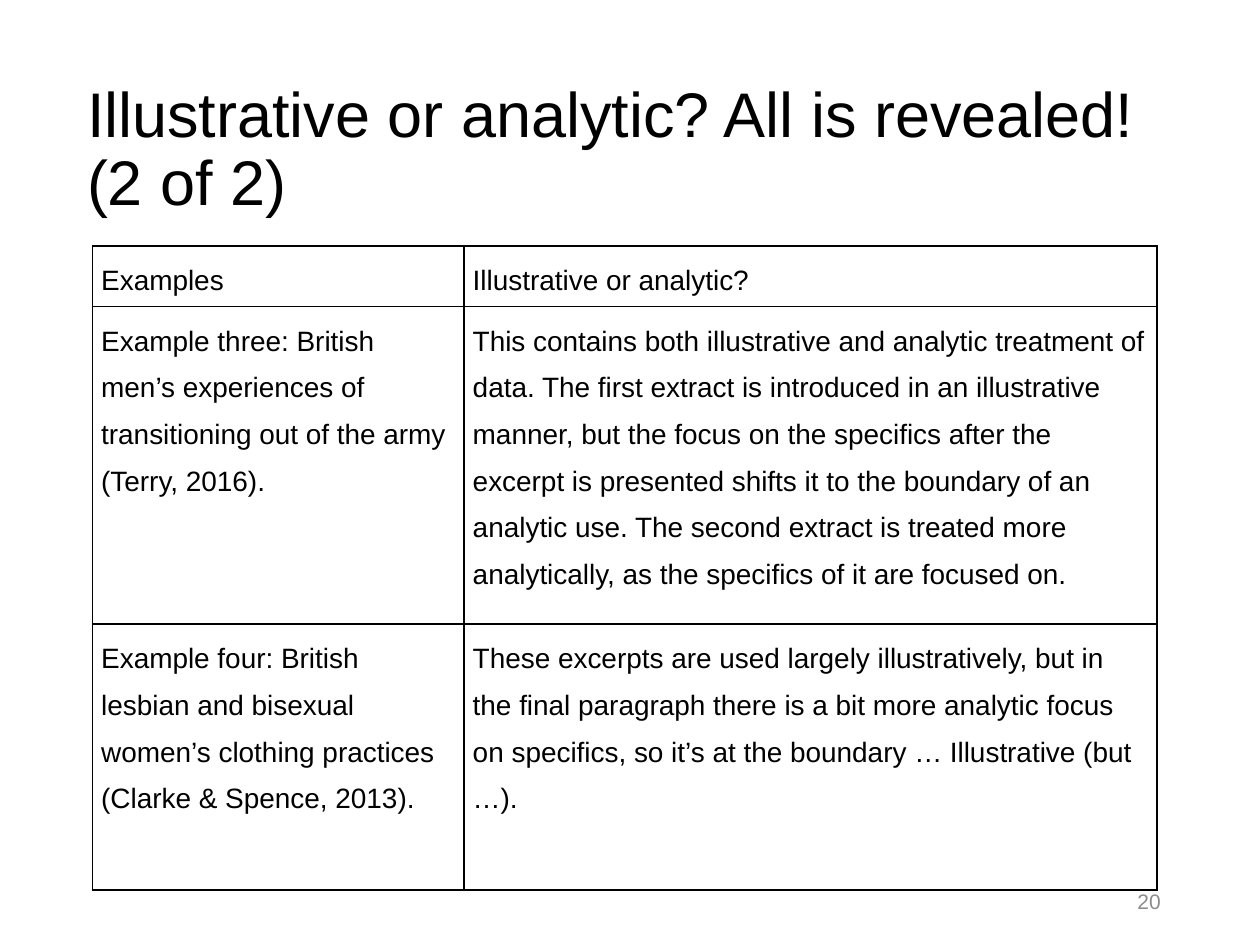
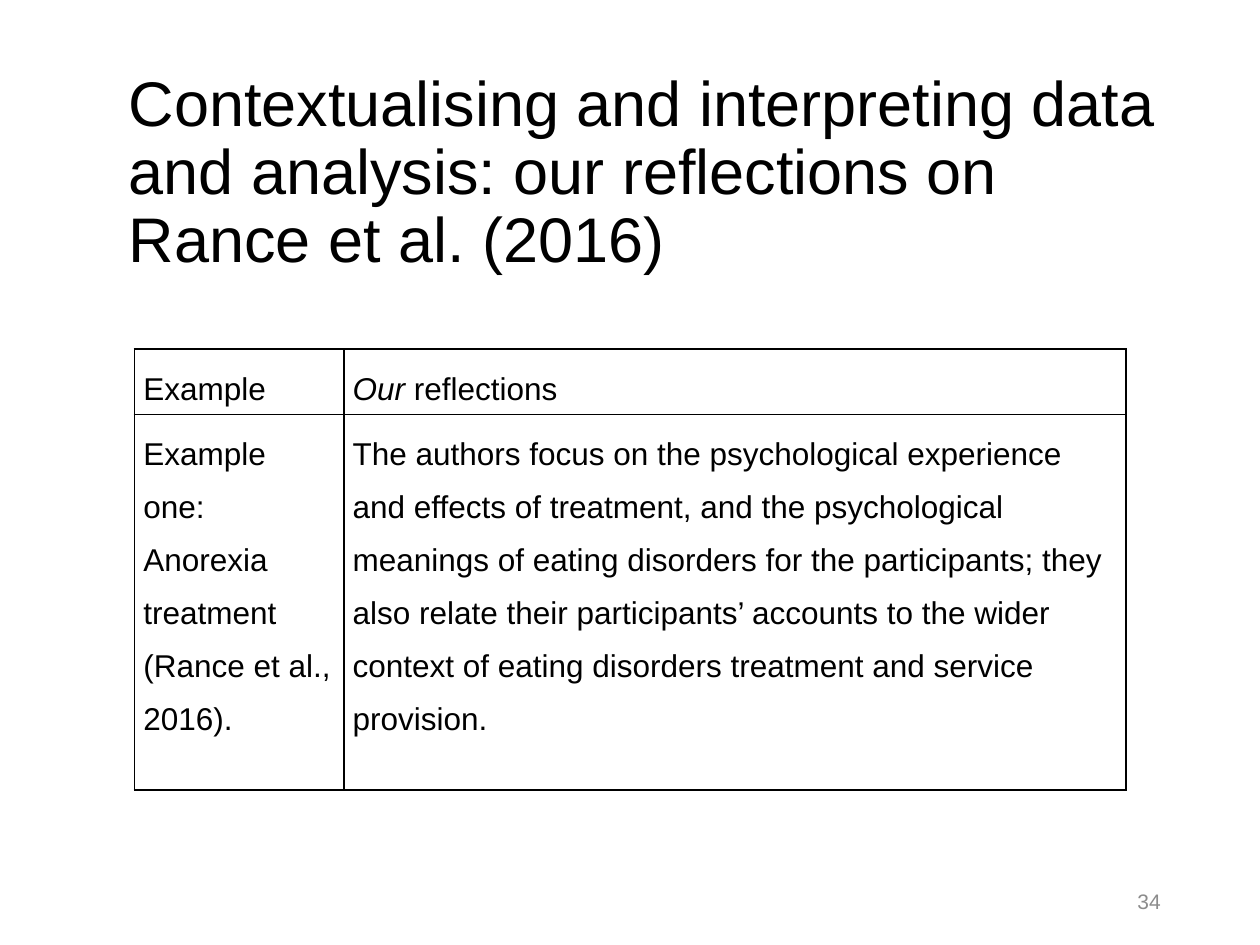
from lxml import etree
from pptx import Presentation
from pptx.dml.color import RGBColor
from pptx.enum.text import MSO_ANCHOR, MSO_AUTO_SIZE, PP_ALIGN
from pptx.oxml.ns import qn
from pptx.util import Cm, Pt

BLACK = RGBColor(0x00, 0x00, 0x00)
GREY = RGBColor(0x8C, 0x8C, 0x8C)
FONT = "Arial"
LEFT, RIGHT = PP_ALIGN.LEFT, PP_ALIGN.RIGHT
MIDDLE = MSO_ANCHOR.MIDDLE
NO_AUTOFIT = MSO_AUTO_SIZE.NONE
TITLE_ONLY_LAYOUT = 5
BORDER_SIDES = ("a:lnL", "a:lnR", "a:lnT", "a:lnB")

TITLE_FONT = {"name": FONT, "size": Pt(36), "color": BLACK}
NUMBER_FONT = {"name": FONT, "size": Pt(12), "color": GREY}
FRAME_FORMAT = {"word_wrap": True, "auto_size": NO_AUTOFIT, "vertical_anchor": MIDDLE}


def set_attributes(target, values):
    for name, value in values.items():
        setattr(target, name, value)


def format_font(font, values):
    """Apply font values, where "color" stands for the RGB colour."""
    set_attributes(font, {name: value for name, value in values.items() if name != "color"})
    font.color.rgb = values["color"]


def place(shape, left, top, width, height):
    set_attributes(shape, {"left": Cm(left), "top": Cm(top),
                           "width": Cm(width), "height": Cm(height)})


def add_title(slide, lines, box):
    title = slide.shapes.title
    place(title, *box)
    set_attributes(title.text_frame, FRAME_FORMAT)
    paragraph = title.text_frame.paragraphs[0]
    set_attributes(paragraph, {"alignment": LEFT, "line_spacing": 0.9})
    for index, line in enumerate(lines):
        if index:
            paragraph.add_line_break()
        run = paragraph.add_run()
        run.text = line
        format_font(run.font, TITLE_FONT)


def add_slide_number(slide, number):
    box = slide.shapes.add_textbox(Cm(17.93), Cm(17.65), Cm(5.72), Cm(1.02))
    set_attributes(box.text_frame, FRAME_FORMAT)
    paragraph = box.text_frame.paragraphs[0]
    paragraph.alignment = RIGHT
    run = paragraph.add_run()
    run.text = str(number)
    format_font(run.font, NUMBER_FONT)


def add_borders(cell):
    properties = cell._tc.get_or_add_tcPr()
    for side in BORDER_SIDES:
        line = etree.SubElement(properties, qn(side), w=str(Pt(1)))
        fill = etree.SubElement(line, qn("a:solidFill"))
        etree.SubElement(fill, qn("a:srgbClr"), val=str(BLACK))


def fill_cell(cell, runs, size, margin):
    """Write runs, given as (text, italic) pairs or as one plain string."""
    add_borders(cell)
    cell.fill.background()
    set_attributes(cell, {"margin_left": Cm(0.18), "margin_right": Cm(0.18),
                          "margin_top": Cm(margin), "margin_bottom": Cm(margin)})
    paragraph = cell.text_frame.paragraphs[0]
    paragraph.line_spacing = 1.5
    for text, italic in [(runs, False)] if isinstance(runs, str) else runs:
        run = paragraph.add_run()
        run.text = text
        format_font(run.font, {"name": FONT, "size": Pt(size),
                               "italic": italic, "color": BLACK})


def add_grid(slide, left, top, widths, heights, rows, size, margin):
    frame = slide.shapes.add_table(len(heights), len(widths), Cm(left), Cm(top),
                                   Cm(sum(widths)), Cm(sum(heights)))
    table = frame.table
    set_attributes(table, {"first_row": False, "horz_banding": False})
    for column, width in zip(table.columns, widths):
        column.width = Cm(width)
    for row, height, contents in zip(table.rows, heights, rows):
        row.height = Cm(height)
        for cell, runs in zip(row.cells, contents):
            fill_cell(cell, runs, size, margin)


def add_table_slide(presentation, title_lines, title_box, number, **grid):
    slide = presentation.slides.add_slide(presentation.slide_layouts[TITLE_ONLY_LAYOUT])
    add_title(slide, title_lines, title_box)
    add_grid(slide, **grid)
    add_slide_number(slide, number)


def main():
    presentation = Presentation()
    set_attributes(presentation, {"slide_width": Cm(25.4), "slide_height": Cm(19.05)})

    add_table_slide(
        presentation,
        ["Illustrative or analytic? All is revealed!", "(2 of 2)"],
        (1.5, 1.2, 21.82, 3.68), 20,
        left=1.86, top=4.96, widths=(7.49, 13.97), heights=(1.22, 6.4, 5.36),
        size=16, margin=0.08,
        rows=[
            ("Examples", "Illustrative or analytic?"),
            ("Example three: British men’s experiences of transitioning out of the army "
             "(Terry, 2016).",
             "This contains both illustrative and analytic treatment of data. The first "
             "extract is introduced in an illustrative manner, but the focus on the "
             "specifics after the excerpt is presented shifts it to the boundary of an "
             "analytic use. The second extract is treated more analytically, as the "
             "specifics of it are focused on."),
            ("Example four: British lesbian and bisexual women’s clothing practices "
             "(Clarke & Spence, 2013).",
             "These excerpts are used largely illustratively, but in the final paragraph "
             "there is a bit more analytic focus on specifics, so it’s at the boundary … "
             "Illustrative (but …)."),
        ])

    add_table_slide(
        presentation,
        ["Contextualising and interpreting data and analysis: our reflections on "
         "Rance et al. (2016)"],
        (2.34, 1.3, 21.9, 4.42), 34,
        left=2.71, top=7.04, widths=(4.22, 15.77), heights=(1.32, 7.57),
        size=18, margin=0.1,
        rows=[
            ("Example", [("Our", True), (" reflections", False)]),
            ("Example one: Anorexia treatment (Rance et al., 2016).",
             "The authors focus on the psychological experience and effects of treatment, "
             "and the psychological meanings of eating disorders for the participants; "
             "they also relate their participants’ accounts to the wider context of "
             "eating disorders treatment and service provision."),
        ])

    presentation.save("out.pptx")


if __name__ == "__main__":
    main()
